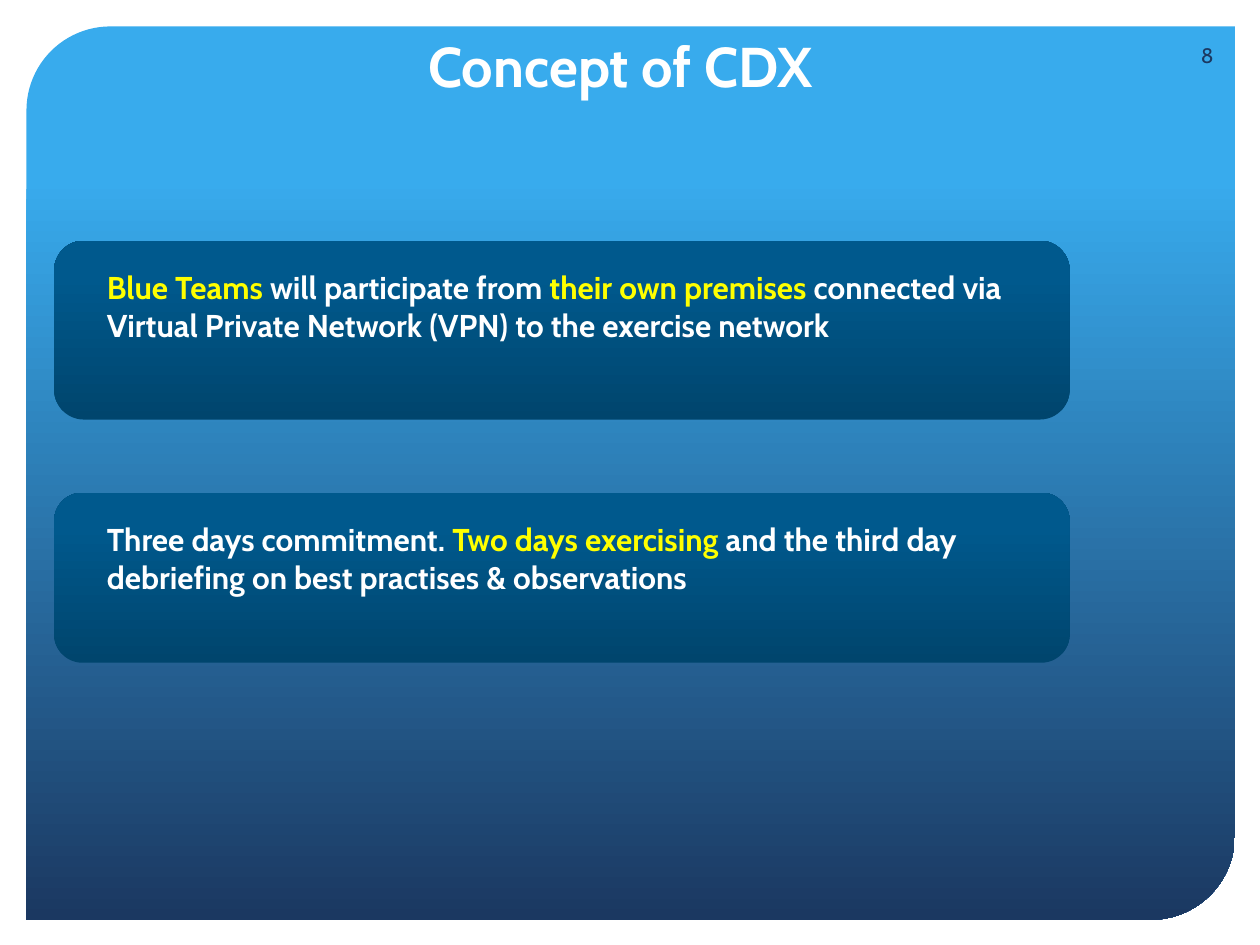
from lxml.etree import SubElement
from pptx import Presentation
from pptx.dml.color import RGBColor
from pptx.enum.shapes import MSO_SHAPE
from pptx.enum.text import MSO_ANCHOR, PP_ALIGN
from pptx.oxml.ns import qn
from pptx.util import Inches, Pt

HUES = {
    "white": "FFFFFF",
    "yellow": "FFFF00",
    "sky": "38ABED",
    "navy": "1B3861",
    "deep": "00456D",
    "mid": "00598D",
    "top": "005A8E",
}


def add_panel(kind, box, stops, angle):
    panel = slide.shapes.add_shape(kind, *map(Inches, box))
    panel.shadow.inherit = False
    panel.line.fill.background()
    panel.fill.gradient()
    panel.fill.gradient_angle = angle
    ramp = panel._element.spPr.find(qn("a:gradFill")).find(qn("a:gsLst"))
    for stop in list(ramp):
        ramp.remove(stop)
    for place, hue in stops:
        stop = SubElement(ramp, qn("a:gs"), pos=str(place * 1000))
        SubElement(stop, qn("a:srgbClr"), val=HUES[hue])
    return panel


def add_text(box, runs, size, bold=True, align=PP_ALIGN.LEFT, anchor=MSO_ANCHOR.TOP):
    frame = slide.shapes.add_textbox(*map(Inches, box)).text_frame
    frame.word_wrap = True
    frame.vertical_anchor = anchor
    para = frame.paragraphs[0]
    para.alignment = align
    for words, hue in runs:
        run = para.add_run()
        run.text = words
        run.font.name = "Cabin"
        run.font.size = Pt(size)
        run.font.bold = bold
        run.font.color.rgb = RGBColor.from_string(HUES[hue])


deck = Presentation()
deck.slide_width = Inches(10)
deck.slide_height = Inches(7.5)
slide = deck.slides.add_slide(deck.slide_layouts[6])

back = add_panel(MSO_SHAPE.ROUND_2_DIAG_RECTANGLE, (0.21, 0.21, 9.59, 7.09),
                 [(17, "sky"), (100, "navy")], 270)
back.adjustments[0] = 0.094
back.adjustments[1] = 0

add_text((1.46, 0.1, 6.93, 0.83), [("Concept of CDX", "white")], 32,
         align=PP_ALIGN.CENTER, anchor=MSO_ANCHOR.MIDDLE)

cards = [
    (1.91, 1.42, [
        ("Blue Teams ", "yellow"),
        ("will participate from ", "white"),
        ("their own premises ", "yellow"),
        ("connected via Virtual Private Network (VPN) to the exercise network", "white"),
    ]),
    (3.91, 1.35, [
        ("Three days commitment. ", "white"),
        ("Two days exercising ", "yellow"),
        ("and the third day debriefing on best practises & observations", "white"),
    ]),
]
for top, height, runs in cards:
    add_panel(MSO_SHAPE.ROUNDED_RECTANGLE, (0.43, top, 8.06, height),
              [(0, "deep"), (80, "mid"), (100, "top")], 90)
    add_text((0.75, top + 0.17, 7.92, 0.71), runs, 18)

add_text((9.19, 0.24, 0.54, 0.4), [("8", "navy")], 12, bold=False,
         align=PP_ALIGN.RIGHT, anchor=MSO_ANCHOR.MIDDLE)

deck.save("out.pptx")
